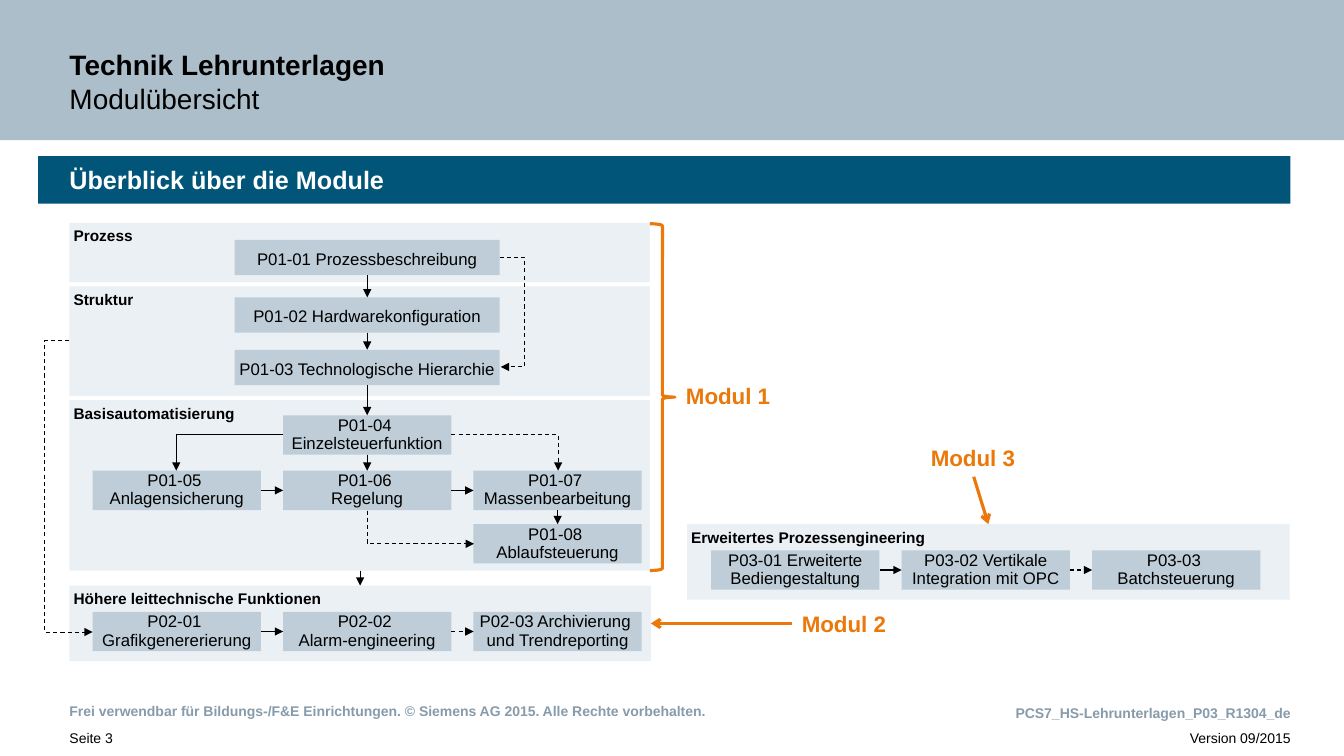
from lxml.etree import SubElement
from pptx import Presentation
from pptx.dml.color import RGBColor
from pptx.enum.dml import MSO_LINE
from pptx.enum.shapes import MSO_CONNECTOR as CON, MSO_SHAPE as SHAPE
from pptx.enum.text import MSO_ANCHOR as ANCHOR, PP_ALIGN as ALIGN
from pptx.oxml.ns import qn
from pptx.util import Inches, Pt

rgb = RGBColor.from_string
ORANGE, BLACK, GREY = "EB780A", "000000", "879BAA"
TOP, LEFT, BOTTOM, RIGHT = range(4)

prs = Presentation()
prs.slide_width, prs.slide_height = Inches(13.34), Inches(7.5)
shapes = prs.slides.add_slide(prs.slide_layouts[6]).shapes


def box(x, y, w, h, text="", size=12, color=BLACK, bold=False, fill=None, ins=(0, 0, 0, 0),
        align=ALIGN.LEFT, anchor=ANCHOR.TOP, spacing=1.0, wrap=True):
    """Rectangle if a fill is given, otherwise a text box."""
    pos = [Inches(v) for v in (x, y, w, h)]
    if fill:
        s = shapes.add_shape(SHAPE.RECTANGLE, *pos)
        s.shadow.inherit = False
        s.fill.solid()
        s.fill.fore_color.rgb = rgb(fill)
        s.line.fill.background()
    else:
        s = shapes.add_textbox(*pos)
    tf = s.text_frame
    tf.word_wrap, tf.vertical_anchor = wrap, anchor
    for side, v in zip(("left", "top", "right", "bottom"), ins):
        setattr(tf, f"margin_{side}", Inches(v))
    p = tf.paragraphs[0]
    p.text, p.alignment, p.line_spacing = text, align, spacing
    for r in p.runs:
        r.font.color.rgb = rgb(color)
        for name, v in {"name": "Arial", "size": Pt(size), "bold": bold}.items():
            setattr(r.font, name, v)
    return s


def arrow(start, end, kind=CON.STRAIGHT, dash=False, color=BLACK, width=0.75, head="triangle"):
    """Arrow between two ends: each is (shape, side) or a point in inches."""
    ends = [(0, 0) if hasattr(e[0], "shape_id") else e for e in (start, end)]
    c = shapes.add_connector(kind, *[Inches(v) for e in ends for v in e])
    for e, join in ((start, c.begin_connect), (end, c.end_connect)):
        if hasattr(e[0], "shape_id"):
            join(*e)
    c.line.color.rgb, c.line.width = rgb(color), Pt(width)
    if dash:
        c.line.dash_style = MSO_LINE.DASH
    SubElement(c.line._get_or_add_ln(), qn("a:tailEnd"), type=head)
    SubElement(c._element.spPr, qn("a:effectLst"))
    return c


# Header and heading bar
box(0, 0, 13.34, 1.39, fill="ADBECB")
title = box(0, 0, 13.34, 1.39, "Technik Lehrunterlagen \vModulübersicht", 20, bold=True,
            ins=(0.69, 0.43, 2.32, 0.26), anchor=ANCHOR.BOTTOM)
title.text_frame.paragraphs[0].runs[1].font.bold = False
box(0.38, 1.55, 12.43, 0.47, "Überblick über die Module", 18, "FFFFFF", True, "005578",
    ins=(0.31, 0, 0.08, 0), anchor=ANCHOR.MIDDLE)

# Footer
box(0, 6.74, 13.34, 0.47,
    "Frei verwendbar für Bildungs-/F&E Einrichtungen. © Siemens AG 2015. Alle Rechte vorbehalten.",
    10, GREY, True, ins=(0.69, 0.16, 3.51, 0), anchor=ANCHOR.MIDDLE)
box(10.06, 6.97, 2.75, 0.17, "PCS7_HS-Lehrunterlagen_P03_R1304_de", 10, GREY, True,
    align=ALIGN.RIGHT, spacing=1.1, wrap=False)
box(0, 7.22, 1.93, 0.28, "Seite 3", 10, ins=(0.69, 0, 0, 0.13), spacing=1.1)
box(4.14, 7.22, 9.2, 0.28, "Version 09/2015", 10, ins=(0, 0, 0.53, 0.13),
    align=ALIGN.RIGHT, spacing=1.1)

# Section panels
panels = {}
for name, x, y, w, h in [
    ("Prozess", 0.69, 2.21, 5.77, 0.59),
    ("Struktur", 0.69, 2.84, 5.77, 1.09),
    ("Basisautomatisierung", 0.69, 3.97, 5.77, 1.69),
    ("Höhere leittechnische Funktionen", 0.69, 5.81, 5.77, 0.75),
    ("Erweitertes Prozessengineering", 6.82, 5.2, 5.98, 0.75),
]:
    panels[name] = box(x, y, w, h, name, 11, bold=True, fill="EBF0F5",
                       ins=(0.04, 0.02, 0.12, 0.06), spacing=1.1)

# Wide steps, then two-line steps on a column grid
steps = {}
step_style = dict(fill="BECDD7", align=ALIGN.CENTER, anchor=ANCHOR.MIDDLE)
for code, y, name in [
    ("P01-01", 2.38, "Prozessbeschreibung"),
    ("P01-02", 2.95, "Hardwarekonfiguration"),
    ("P01-03", 3.47, "Technologische Hierarchie"),
]:
    steps[code] = box(2.33, y, 2.63, 0.35, f"{code} {name}", spacing=1.1, **step_style)

for x0, col, y, text in [
    (0.92, 1, 4.12, "P01-04 \vEinzelsteuerfunktion"),
    (0.92, 0, 4.67, "P01-05 \vAnlagensicherung"),
    (0.92, 1, 4.67, "P01-06 \vRegelung"),
    (0.92, 2, 4.67, "P01-07 \vMassenbearbeitung"),
    (0.92, 2, 5.2, "P01-08 \vAblaufsteuerung"),
    (0.92, 0, 6.07, "P02-01 \vGrafikgenererierung"),
    (0.92, 1, 6.07, "P02-02 \vAlarm-engineering"),
    (0.92, 2, 6.07, "P02-03 Archivierung \vund Trendreporting"),
    (7.06, 0, 5.46, "P03-01 Erweiterte\vBediengestaltung"),
    (7.06, 1, 5.46, "P03-02 Vertikale\vIntegration mit OPC"),
    (7.06, 2, 5.46, "P03-03 \vBatchsteuerung"),
]:
    steps[text[:6]] = box(x0 + 1.89 * col, y, 1.67, 0.39, text, spacing=0.9, **step_style)

# Straight arrows between steps
for a, b in [("01-01", "01-02"), ("01-02", "01-03"), ("01-03", "01-04"),
             ("01-04", "01-06"), ("01-07", "01-08")]:
    arrow((steps["P" + a], BOTTOM), (steps["P" + b], TOP))
for a, b, dash in [("01-05", "01-06", False), ("01-06", "01-07", False),
                   ("02-01", "02-02", False), ("02-02", "02-03", True),
                   ("03-01", "03-02", False), ("03-02", "03-03", True)]:
    arrow((steps["P" + a], RIGHT), (steps["P" + b], LEFT), dash=dash)
arrow((panels["Basisautomatisierung"], BOTTOM),
      (panels["Höhere leittechnische Funktionen"], TOP))

# Bent arrows: start, end, dashed, preset, bend position, rotation
for start, end, dash, preset, bend, turn in [
    ((4.96, 2.55), (4.97, 3.64), True, "bentConnector3", 25, 0),
    ((0.69, 3.38), (0.92, 6.27), True, "bentConnector3", -1.08, 0),
    ((4.48, 4.31), (5.54, 4.67), True, "bentConnector2", None, 0),
    ((2.81, 4.31), (1.75, 4.67), False, "bentConnector2", None, 0),
    ((4.34, 4.7), (4.01, 5.76), True, "bentConnector2", None, 270),
]:
    c = arrow(start, end, CON.ELBOW, dash)
    geom = c._element.spPr.find(qn("a:prstGeom"))
    geom.set("prst", preset)
    if bend is not None:
        SubElement(geom.find(qn("a:avLst")), qn("a:gd"), name="adj1",
                   fmla=f"val {round(bend * 100000)}")
    if turn:
        c._element.spPr.find(qn("a:xfrm")).set("rot", str(turn * 60000))

# Module labels with brace and arrows
modules = [box(x, y, 1.05, 0.37, f"Modul {n}", 16, ORANGE, True,
               ins=(0.1, 0.05, 0.1, 0.05), wrap=False)
           for n, (x, y) in enumerate([(6.71, 3.74), (7.86, 6), (9.14, 4.36)], 1)]
brace = shapes.add_shape(SHAPE.RIGHT_BRACE, Inches(6.45), Inches(2.22), Inches(0.25), Inches(3.44))
brace.shadow.inherit = False
brace.fill.solid()
brace.fill.fore_color.rgb = rgb("FFFFFF")
brace.line.color.rgb, brace.line.width = rgb(ORANGE), Pt(2.25)
brace.adjustments[0], brace.adjustments[1] = 0.08, 0.5
pointer = dict(color=ORANGE, width=2.25, head="arrow")
arrow((modules[1], LEFT), (panels["Höhere leittechnische Funktionen"], RIGHT), **pointer)
arrow((modules[2], BOTTOM), (panels["Erweitertes Prozessengineering"], TOP), **pointer)

prs.save("out.pptx")
